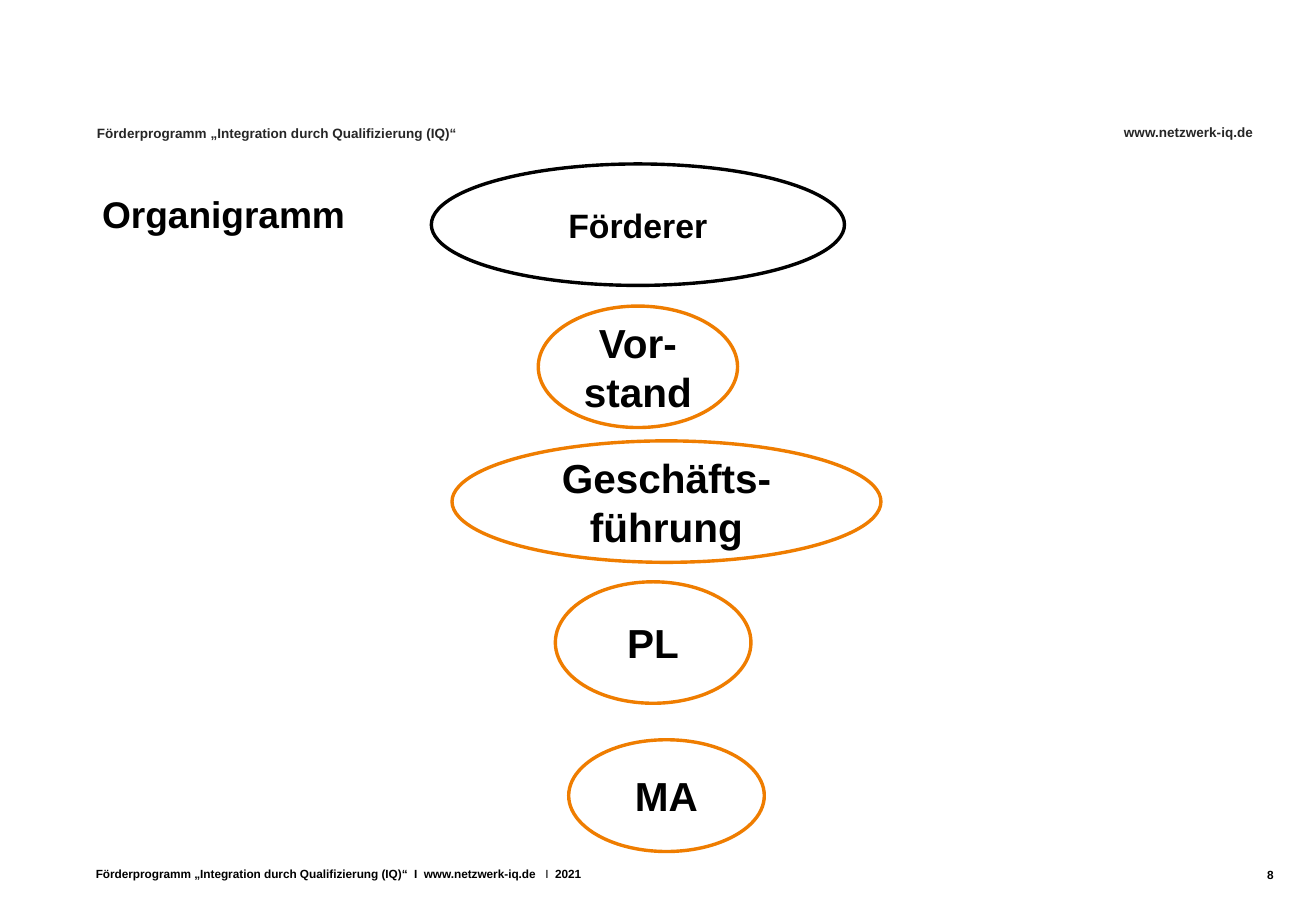
"""Build the organisation chart slide: five levels drawn as ellipses."""
from lxml import etree
from pptx import Presentation
from pptx.dml.color import RGBColor
from pptx.enum.shapes import MSO_SHAPE
from pptx.enum.text import MSO_ANCHOR, MSO_AUTO_SIZE, PP_ALIGN
from pptx.oxml.ns import qn
from pptx.util import Inches, Pt

ELLIPSE = MSO_SHAPE.OVAL
MIDDLE = MSO_ANCHOR.MIDDLE
LEFT, CENTER, RIGHT = PP_ALIGN.LEFT, PP_ALIGN.CENTER, PP_ALIGN.RIGHT
BLACK, GRAY, ORANGE, WHITE = "000000", "262626", "EF7D00", "FFFFFF"
PROGRAMME = "Förderprogramm „Integration durch Qualifizierung (IQ)“"
WEBSITE = "www.netzwerk-iq.de"


def paint(color_format, color):
    color_format.rgb = RGBColor.from_string(color)


def style_text(box, size, color, align):
    frame = box.text_frame
    frame.word_wrap = True
    frame.auto_size = MSO_AUTO_SIZE.NONE
    frame.vertical_anchor = MIDDLE
    para = frame.paragraphs[0]
    para.alignment = align
    para.font.name = "Arial"
    para.font.size = Pt(size)
    para.font.bold = True
    paint(para.font.color, color)


deck = Presentation()
deck.slide_width, deck.slide_height = Inches(10.83), Inches(7.5)
page = deck.slides.add_slide(deck.slide_layouts[5])

title = page.shapes.title
title.left, title.top = Inches(0.74), Inches(1.51)
title.width, title.height = Inches(9.34), Inches(0.49)
title.text_frame.text = "Organigramm"
style_text(title, 22, BLACK, LEFT)

labels = [
    (PROGRAMME, 0.7, 0.98, 3.66, 0.23, 8, GRAY, LEFT),
    (WEBSITE, 9.25, 0.97, 1.2, 0.24, 8, GRAY, LEFT),
    ("8", 8.05, 7, 2.53, 0.4, 7, BLACK, RIGHT),
]
for text, left, top, width, height, size, color, align in labels:
    box = page.shapes.add_textbox(Inches(left), Inches(top), Inches(width), Inches(height))
    box.text_frame.text = text
    if text == WEBSITE:
        box.text_frame.margin_left = box.text_frame.margin_right = 0
    style_text(box, size, color, align)

footer = page.shapes.add_textbox(Inches(0.69), Inches(7.08), Inches(7.47), Inches(0.22))
footer_para = footer.text_frame.paragraphs[0]
tab_list = etree.SubElement(footer_para._p.get_or_add_pPr(), qn("a:tabLst"))
for position in (2.62, 2.7, 3.7, 3.78):
    etree.SubElement(tab_list, qn("a:tab"), pos=str(Inches(position)), algn="l")
for text, bold in ((f"{PROGRAMME}\tI\t{WEBSITE}\t", True), ("I\t", False), ("2021", True)):
    span = footer_para.add_run()
    span.text = text
    span.font.bold = bold
style_text(footer, 7, BLACK, LEFT)

levels = [
    ("Förderer", 3.55, 1.35, 3.4, 1, BLACK, 20),
    ("Vor-stand", 4.43, 2.52, 1.64, 1, ORANGE, 24),
    ("Geschäfts-führung", 3.72, 3.63, 3.53, 1, ORANGE, 24),
    ("PL", 4.57, 4.79, 1.61, 1, ORANGE, 24),
    ("MA", 4.68, 6.09, 1.61, 0.92, ORANGE, 24),
]
for name, left, top, width, height, outline, size in levels:
    level = page.shapes.add_shape(ELLIPSE, Inches(left), Inches(top), Inches(width), Inches(height))
    level.shadow.inherit = False
    level.fill.solid()
    paint(level.fill.fore_color, WHITE)
    paint(level.line.color, outline)
    level.line.width = Pt(2)
    level.text_frame.text = name
    style_text(level, size, BLACK, CENTER)

deck.save("out.pptx")
